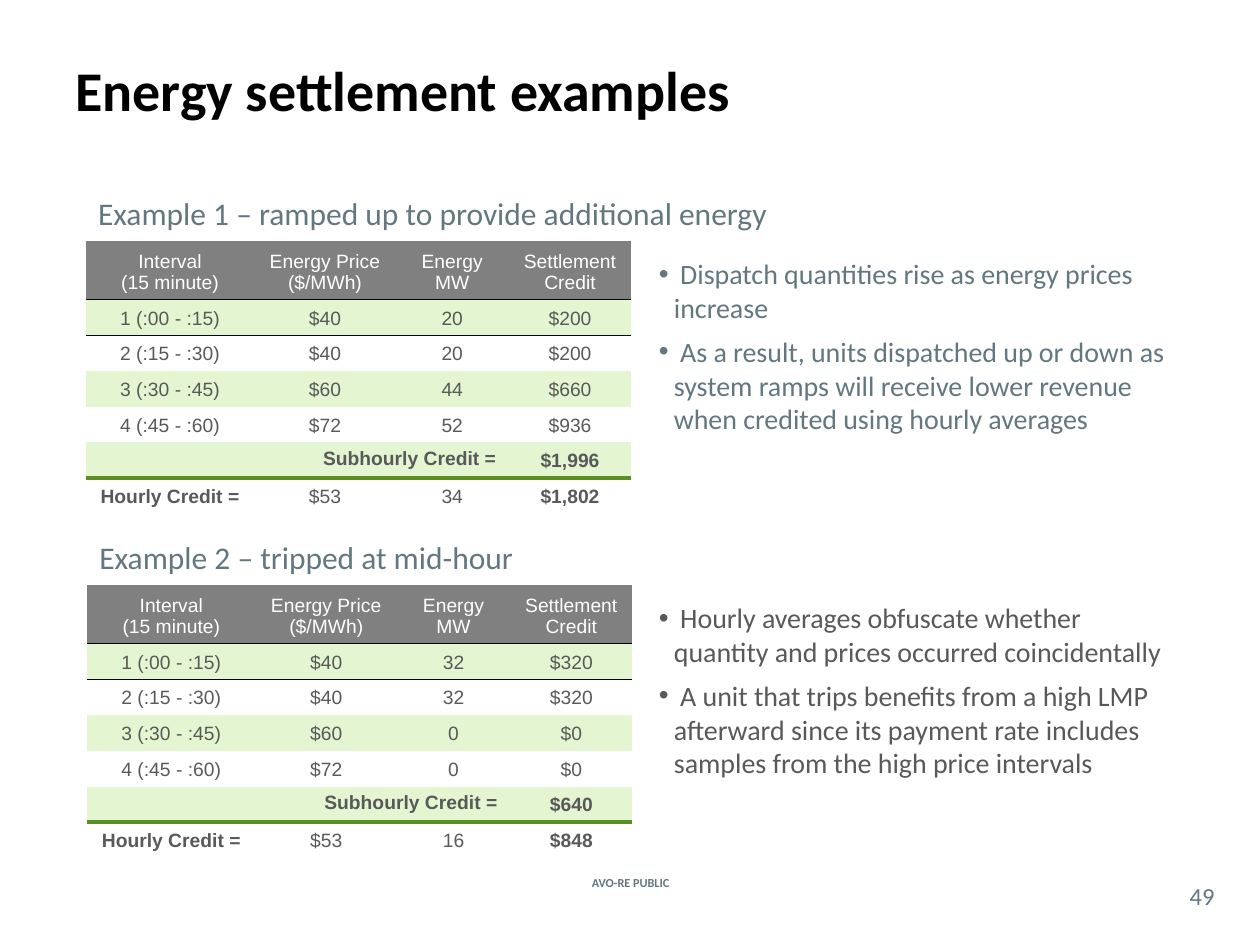
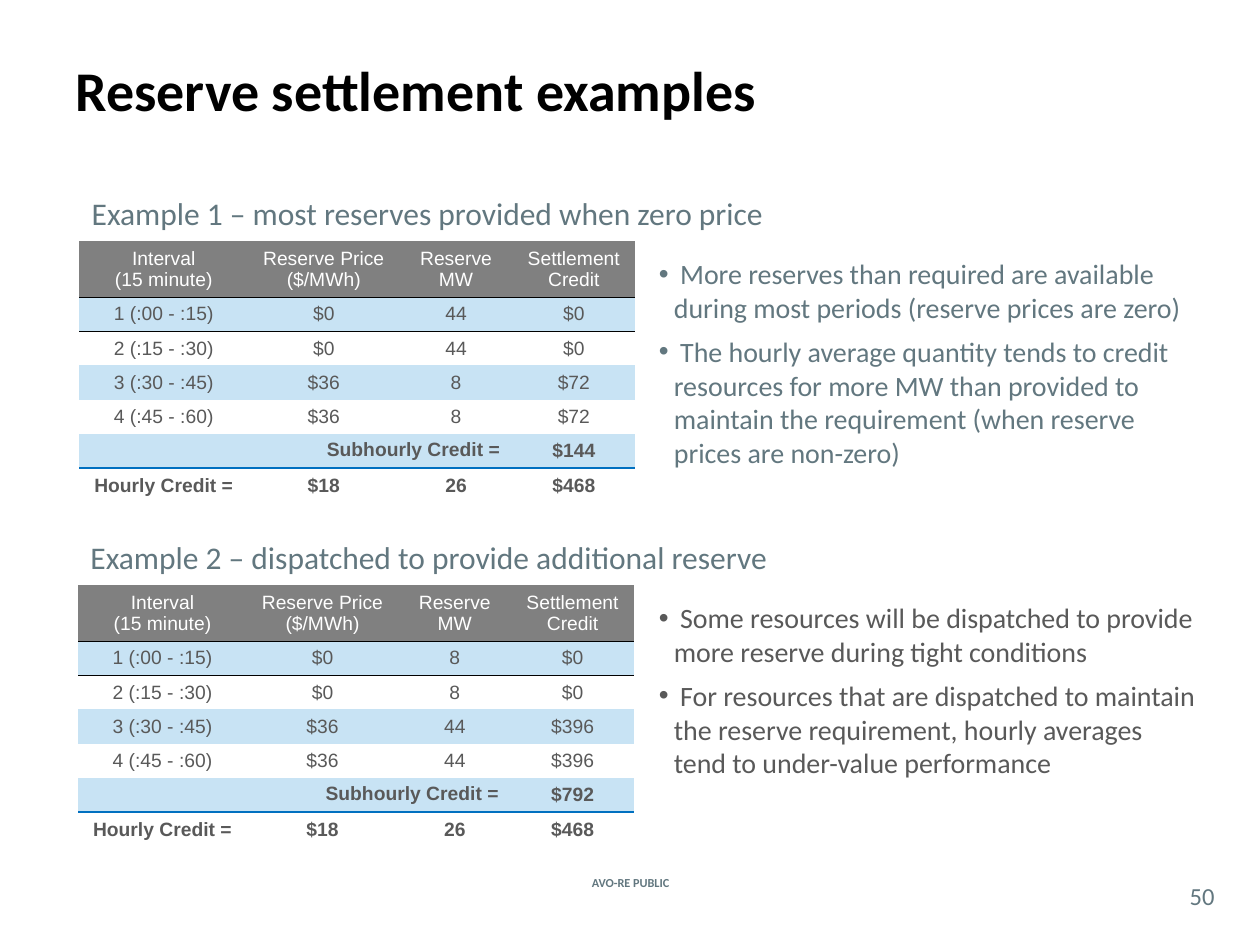
from lxml import etree
from pptx import Presentation
from pptx.dml.color import RGBColor
from pptx.enum import text
from pptx.oxml import ns
from pptx.util import Inches, Pt

SLATE, GRAY, BLACK, WHITE = "62777F", "595959", "000000", "FFFFFF"
HEADER_FILL = "808080"
NO_GRID_STYLE = "{2D5ABB26-0587-4C30-8999-92F81FD0307C}"
FOOTER = "AVO-RE PUBLIC"
INTERVALS = ["1 (:00 - :15)", "2 (:15 - :30)", "3 (:30 - :45)", "4 (:45 - :60)"]

# Each example: prices, megawatts and credits by interval, then the two totals.
SLIDES = [
    dict(
        title="Energy settlement examples", number=49, product="Energy",
        band="E4F5D1", rule=("598E20", 2.25), hourly_bold=False,
        columns=[1.34, 1.12, 0.9, 0.97], header_height=0.47, table_height=2.17,
        notes_width=4.31,
        examples=[
            dict(
                left=0.68, heading="Example 1 – ramped up to provide additional energy",
                heading_width=5.58,
                prices=["$40", "$40", "$60", "$72"], mw=["20", "20", "44", "52"],
                credits=["$200", "$200", "$660", "$936"],
                subhourly="$1,996", hourly=["$53", "34", "$1,802"],
                notes=["Dispatch quantities rise as energy prices increase",
                       "As a result, units dispatched up or down as system ramps will "
                       "receive lower revenue when credited using hourly averages"]),
            dict(
                left=0.69, heading="Example 2 – tripped at mid-hour", heading_width=3.53,
                prices=["$40", "$40", "$60", "$72"], mw=["32", "32", "0", "0"],
                credits=["$320", "$320", "$0", "$0"],
                subhourly="$640", hourly=["$53", "16", "$848"],
                notes=["Hourly averages obfuscate whether quantity and prices occurred "
                       "coincidentally",
                       "A unit that trips benefits from a high LMP afterward since its "
                       "payment rate includes samples from the high price intervals"]),
        ]),
    dict(
        title="Reserve settlement examples", number=50, product="Reserve",
        band="C8E3F4", rule=("0070C0", 1.5), hourly_bold=True,
        columns=[1.34, 1.2, 0.9, 0.97], header_height=0.44, table_height=2.07,
        notes_width=4.48,
        examples=[
            dict(
                left=0.63, heading="Example 1 – most reserves provided when zero price",
                heading_width=5.6,
                prices=["$0", "$0", "$36", "$36"], mw=["44", "44", "8", "8"],
                credits=["$0", "$0", "$72", "$72"],
                subhourly="$144", hourly=["$18", "26", "$468"],
                notes=["More reserves than required are available during most periods "
                       "(reserve prices are zero)",
                       "The hourly average quantity tends to credit resources for more MW "
                       "than provided to maintain the requirement (when reserve prices "
                       "are non-zero)"]),
            dict(
                left=0.62, heading="Example 2 – dispatched to provide additional reserve",
                heading_width=5.64,
                prices=["$0", "$0", "$36", "$36"], mw=["8", "8", "44", "44"],
                credits=["$0", "$0", "$396", "$396"],
                subhourly="$792", hourly=["$18", "26", "$468"],
                notes=["Some resources will be dispatched to provide more reserve during "
                       "tight conditions",
                       "For resources that are dispatched to maintain the reserve "
                       "requirement, hourly averages tend to under-value performance"]),
        ]),
]

TABLE_TOPS = [1.91, 4.64]
NOTE_COLORS = [SLATE, GRAY]
HEADING_RISE, NOTES_DROP, NOTES_LEFT = 0.42, 0.08, 5.13


def rgb(color):
    return RGBColor.from_string(color)


def add_run(paragraph, words, size, color, bold=False, face="Calibri"):
    run = paragraph.add_run()
    run.text = words
    run.font.name, run.font.size, run.font.bold = face, Pt(size), bold
    run.font.color.rgb = rgb(color)


def add_frame(slide, left, top, width, height, anchor=text.MSO_ANCHOR.TOP, wrap=True):
    box = slide.shapes.add_textbox(*map(Inches, (left, top, width, height)))
    frame = box.text_frame
    frame.word_wrap, frame.vertical_anchor = wrap, anchor
    return frame


def add_notes(slide, top, width, notes, color):
    frame = add_frame(slide, NOTES_LEFT, top, width, 1.53)
    for i, note in enumerate(notes):
        paragraph = frame.add_paragraph() if i else frame.paragraphs[0]
        properties = paragraph._p.get_or_add_pPr()
        properties.set("marL", str(Inches(0.12)))
        properties.set("indent", str(-Inches(0.12)))
        etree.SubElement(properties, ns.qn("a:buFont"), typeface="Arial")
        etree.SubElement(properties, ns.qn("a:buChar"), char="•")
        paragraph.space_after = Pt(6)
        add_run(paragraph, " " + note, 16, color)


def set_border(cell, side, color, points):
    """Draw one cell border; side is T or B."""
    line = etree.Element(ns.qn("a:ln" + side), w=str(Pt(points)))
    fill = etree.SubElement(line, ns.qn("a:solidFill"))
    etree.SubElement(fill, ns.qn("a:srgbClr"), val=color)
    cell._tc.get_or_add_tcPr().insert(0, line)


def fill_cell(cell, words, color, fill, bold=False, align=text.PP_ALIGN.CENTER,
              anchor=text.MSO_ANCHOR.BOTTOM):
    cell.margin_top, cell.margin_bottom = Inches(0.03), Inches(0.05)
    cell.vertical_anchor = anchor
    if fill:
        cell.fill.solid()
        cell.fill.fore_color.rgb = rgb(fill)
    else:
        cell.fill.background()
    paragraph = cell.text_frame.paragraphs[0]
    paragraph.alignment = align
    paragraph.font.size = Pt(11)
    for i, line in enumerate(words.split("\n") if words else []):
        if i:
            paragraph.add_line_break()
        add_run(paragraph, line, 11, color, bold, "Arial")


def add_settlement_table(slide, top, page, example):
    product = page["product"]
    rows = [["Interval\n(15 minute)", f"{product} Price\n($/MWh)", f"{product}\nMW",
             "Settlement\nCredit"],
            *zip(INTERVALS, example["prices"], example["mw"], example["credits"]),
            ["", "Subhourly Credit =", "", example["subhourly"]],
            ["Hourly Credit =", *example["hourly"]]]
    last = len(rows) - 1
    subtotal = last - 1
    columns, height = page["columns"], page["table_height"]
    table = slide.shapes.add_table(
        len(rows), len(columns), Inches(example["left"]), Inches(top),
        Inches(sum(columns)), Inches(height)).table
    table.first_row = table.horz_banding = False
    table._tbl.tblPr.find(ns.qn("a:tableStyleId")).text = NO_GRID_STYLE
    for column, width in zip(table.columns, columns):
        column.width = Inches(width)
    body_height = (height - page["header_height"]) / last
    borders = {0: ("B", BLACK, 0.5), 1: ("T", BLACK, 0.5),
               subtotal: ("B", *page["rule"]), last: ("T", *page["rule"])}

    for r, row in enumerate(rows):
        table.rows[r].height = Inches(body_height if r else page["header_height"])
        fill = HEADER_FILL if r == 0 else page["band"] if r % 2 else None
        for c, words in enumerate(row):
            cell = table.cell(r, c)
            bold = r == subtotal or r == last and (c in (0, 3) or page["hourly_bold"])
            layout = {}
            if (r, c) == (subtotal, 1):
                layout = dict(align=text.PP_ALIGN.RIGHT, anchor=text.MSO_ANCHOR.MIDDLE)
            fill_cell(cell, words, GRAY if r else WHITE, fill, bold, **layout)
            if r in borders:
                set_border(cell, *borders[r])
    table.cell(subtotal, 1).merge(table.cell(subtotal, 2))


def add_page_frame(slide, title, number):
    """Add the title, footer and page number that every slide carries."""
    middle = text.MSO_ANCHOR.MIDDLE
    heading = add_frame(slide, 0.5, 0.08, 9, 1.25, middle)
    add_run(heading.paragraphs[0], title, 32, BLACK, True)
    footer = add_frame(slide, 4.27, 6.92, 1.47, 0.17, middle)
    page_number = add_frame(slide, 9.33, 6.96, 0.42, 0.29, middle)
    page_number.margin_left = page_number.margin_right = 0
    page_number.margin_top = page_number.margin_bottom = 0
    for frame, words, size, bold in ((footer, FOOTER, 7, True),
                                     (page_number, str(number), 14, False)):
        frame.paragraphs[0].alignment = text.PP_ALIGN.CENTER
        add_run(frame.paragraphs[0], words, size, SLATE, bold)


def main():
    deck = Presentation()
    deck.slide_width, deck.slide_height = Inches(10), Inches(7.5)
    for page in SLIDES:
        slide = deck.slides.add_slide(deck.slide_layouts[6])
        add_page_frame(slide, page["title"], page["number"])
        for example, top, color in zip(page["examples"], TABLE_TOPS, NOTE_COLORS):
            heading = add_frame(slide, example["left"], top - HEADING_RISE,
                                example["heading_width"], 0.4, wrap=False)
            add_run(heading.paragraphs[0], example["heading"], 18, SLATE)
            add_settlement_table(slide, top, page, example)
            add_notes(slide, top + NOTES_DROP, page["notes_width"], example["notes"], color)
    deck.save("out.pptx")


if __name__ == "__main__":
    main()
